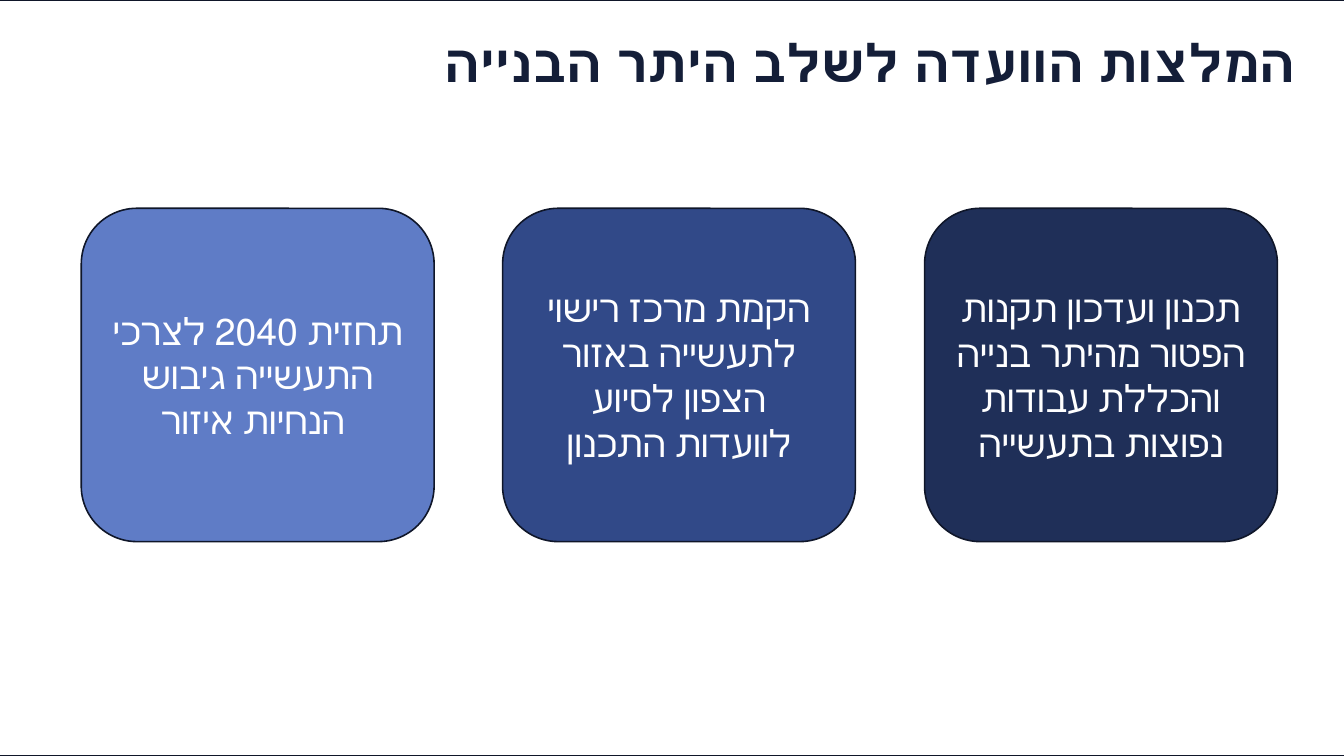
from dataclasses import dataclass

from pptx import Presentation
from pptx.dml.color import RGBColor
from pptx.enum.shapes import MSO_SHAPE
from pptx.enum.text import MSO_ANCHOR, MSO_AUTO_SIZE, PP_ALIGN
from pptx.util import Emu, Pt

SCALE = 4572


@dataclass(frozen=True)
class Theme:
    paper: str = "FFFFFF"
    outline: str = "0F1629"
    title: str = "141E38"
    card_text: str = "FFFFFF"
    card_fills: tuple = ("1F2F58", "314988", "5F7CC6")
    title_font: str = "Karla"
    card_font: str = "Calibri"
    title_size: int = 28
    card_size: int = 20
    line_width: float = 0.85


THEME = Theme()
TITLE = "המלצות הוועדה לשלב היתר הבנייה"
RECOMMENDATIONS = (
    "תכנון ועדכון תקנות הפטור מהיתר בנייה והכללת עבודות נפוצות בתעשייה",
    "הקמת מרכז רישוי לתעשייה באזור הצפון לסיוע לוועדות התכנון",
    "תחזית 2040 לצרכי התעשייה גיבוש הנחיות איזור ",
)


def px(length):
    return Emu(length * SCALE)


def add_panel(page, kind, box, fill):
    panel = page.shapes.add_shape(kind, *map(px, box))
    panel.shadow.inherit = False
    panel.fill.solid()
    panel.fill.fore_color.rgb = RGBColor.from_string(fill)
    panel.line.color.rgb = RGBColor.from_string(THEME.outline)
    panel.line.width = Pt(THEME.line_width)
    return panel


def write_text(shape, text, align, font, size, color, bold=False):
    frame = shape.text_frame
    frame.text = text
    frame.word_wrap = True
    frame.auto_size = MSO_AUTO_SIZE.NONE
    frame.vertical_anchor = MSO_ANCHOR.MIDDLE
    para = frame.paragraphs[0]
    para.alignment = align
    span = para.runs[0]
    span.font.name = font
    span.font.size = Pt(size)
    span.font.bold = bold
    span.font.color.rgb = RGBColor.from_string(color)
    return para


def add_frame(page, box):
    frame = add_panel(page, MSO_SHAPE.RECTANGLE, box, THEME.paper)
    page.shapes.title.element.addprevious(frame.element)


def place_title(page, box):
    title = page.shapes.title
    title.left, title.top, title.width, title.height = map(px, box)
    para = write_text(title, TITLE, PP_ALIGN.RIGHT, THEME.title_font,
                      THEME.title_size, THEME.title, bold=True)
    para.line_spacing = 0.9
    para._p.get_or_add_pPr().set("rtl", "1")


def add_cards(page, box, card_width):
    left, top, width, height = box
    step = (width - card_width) / (len(RECOMMENDATIONS) - 1)
    for index, (text, fill) in enumerate(zip(RECOMMENDATIONS, THEME.card_fills)):
        card_left = round(left + width - card_width - index * step)
        card = add_panel(page, MSO_SHAPE.ROUNDED_RECTANGLE,
                         (card_left, top, card_width, height), fill)
        write_text(card, text, PP_ALIGN.CENTER, THEME.card_font,
                   THEME.card_size, THEME.card_text)


def main():
    deck = Presentation()
    deck.slide_width, deck.slide_height = px(2000), px(1125)
    page = deck.slides.add_slide(deck.slide_layouts[5])
    add_frame(page, (-10, 0, 2020, 1125))
    place_title(page, (48, 22, 1900, 152))
    add_cards(page, (121, 310, 1780, 496), 525)
    deck.save("out.pptx")


if __name__ == "__main__":
    main()
